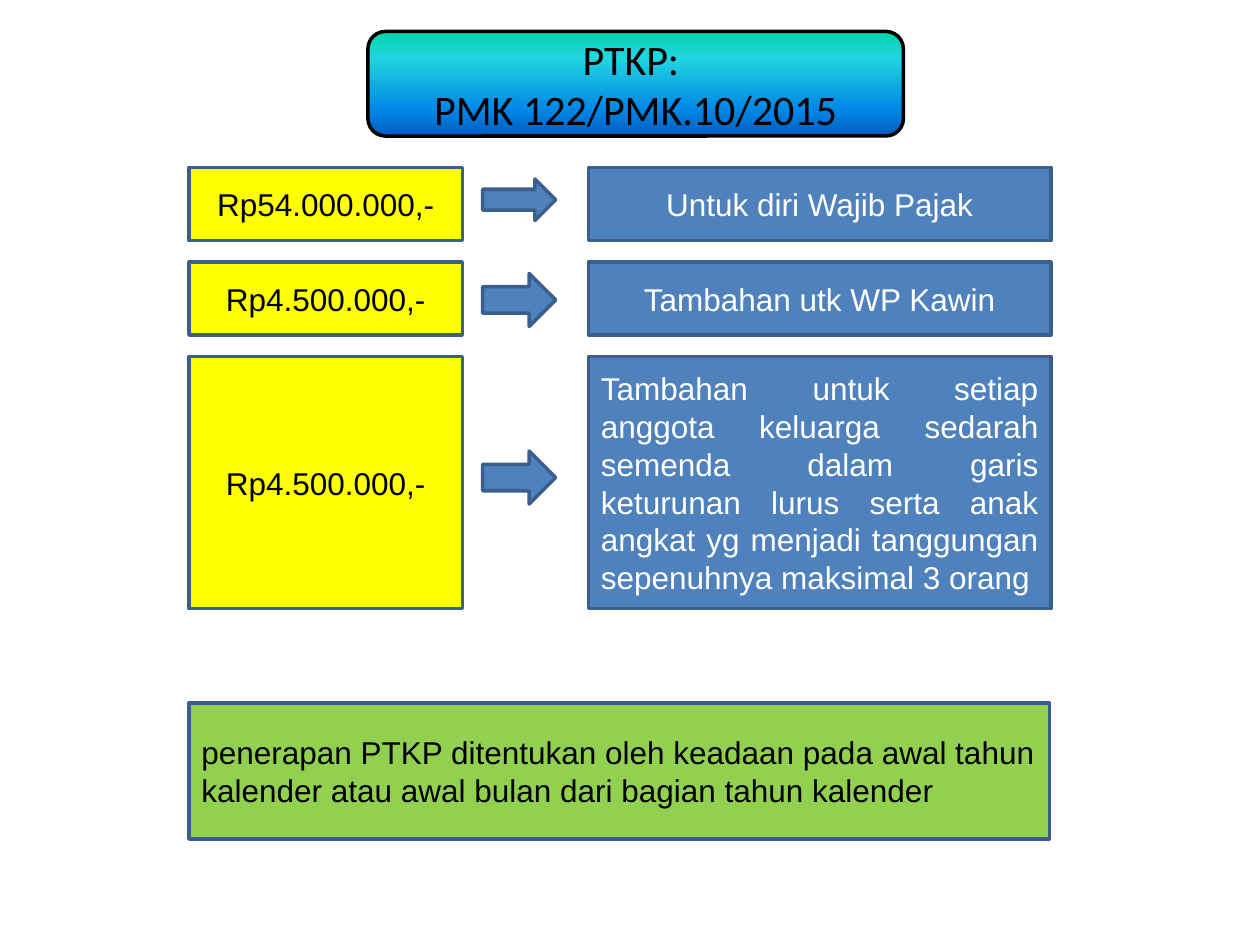
import dataclasses

import lxml.etree
import pptx
import pptx.dml.color
import pptx.enum.shapes
import pptx.enum.text
import pptx.oxml.ns
import pptx.util

Inches = pptx.util.Inches
SHAPE = pptx.enum.shapes.MSO_SHAPE
ALIGN = pptx.enum.text.PP_ALIGN
qn = pptx.oxml.ns.qn


@dataclasses.dataclass(frozen=True)
class Theme:
    """Colours, fonts and type sizes of the slide."""
    black: str = "000000"
    white: str = "FFFFFF"
    yellow: str = "FFFF00"
    blue: str = "4F81BD"
    green: str = "92D050"
    border: str = "3A5F8C"
    banner: tuple = ((0, "03D4A8"), (25, "21D6E0"), (75, "0087E6"), (100, "005CBF"))
    body_font: str = "Arial"
    title_font: str = "Calibri"
    body_size: int = 18
    title_size: int = 24
    line_width: int = 2


def rgb(value):
    """Turn a hex string into a colour."""
    return pptx.dml.color.RGBColor.from_string(value)


class SlideBuilder:
    """Draws styled elements on the current slide."""

    def __init__(self, slide, theme):
        """Keep the slide and its style."""
        self.slide = slide
        self.theme = theme

    def shape(self, kind, at, fill, line):
        """Add a filled and outlined preset shape."""
        sp = self.slide.shapes.add_shape(kind, *(Inches(v) for v in at))
        sp.shadow.inherit = False
        if fill:
            sp.fill.solid()
            sp.fill.fore_color.rgb = rgb(fill)
        sp.line.color.rgb = rgb(line)
        sp.line.width = pptx.util.Pt(self.theme.line_width)
        return sp

    def add_text(self, sp, lines, color, align, font, size):
        """Add one paragraph per line to a shape."""
        tf = sp.text_frame
        tf.word_wrap = True
        tf.vertical_anchor = pptx.enum.text.MSO_ANCHOR.MIDDLE
        for i, text in enumerate(lines):
            p = tf.add_paragraph() if i else tf.paragraphs[0]
            p.alignment = align
            r = p.add_run()
            r.text = text
            r.font.name = font
            r.font.size = pptx.util.Pt(size)
            r.font.color.rgb = rgb(color)

    def box(self, at, text, fill, color, align=ALIGN.CENTER):
        """Add a rectangle with body text."""
        t = self.theme
        sp = self.shape(SHAPE.RECTANGLE, at, fill, t.border)
        self.add_text(sp, [text], color, align, t.body_font, t.body_size)

    def arrow(self, at):
        """Add a block arrow pointing right."""
        self.shape(SHAPE.RIGHT_ARROW, at, self.theme.blue, self.theme.border)

    def banner(self, at, lines):
        """Add the rounded title with a vertical gradient."""
        t = self.theme
        sp = self.shape(SHAPE.ROUNDED_RECTANGLE, at, None, t.black)
        sp.fill.gradient()
        sp.fill.gradient_angle = 270
        stops = sp._element.spPr.find(".//" + qn("a:gsLst"))
        for stop in list(stops):
            stops.remove(stop)
        for percent, color in t.banner:
            stop = lxml.etree.SubElement(stops, qn("a:gs"), pos=str(percent * 1000))
            lxml.etree.SubElement(stop, qn("a:srgbClr"), val=color)
        self.add_text(sp, lines, t.black, ALIGN.CENTER, t.title_font, t.title_size)


def main():
    """Build and save the slide."""
    prs = pptx.Presentation()
    prs.slide_width, prs.slide_height = Inches(10), Inches(7.5)
    theme = Theme()
    s = SlideBuilder(prs.slides.add_slide(prs.slide_layouts[6]), theme)

    rows = [
        (1.33, 0.58, "Rp54.000.000,-", "Untuk diri Wajib Pajak",
         ALIGN.CENTER, 1.42, 0.33),
        (2.08, 0.58, "Rp4.500.000,-", "Tambahan utk WP Kawin",
         ALIGN.CENTER, 2.17, 0.42),
        (2.83, 2, "Rp4.500.000,-",
         "Tambahan untuk setiap anggota keluarga sedarah semenda dalam garis "
         "keturunan lurus serta anak angkat yg menjadi tanggungan sepenuhnya "
         "maksimal 3 orang",
         ALIGN.JUSTIFY, 3.58, 0.42),
    ]
    for top, height, amount, reason, align, arrow_top, arrow_height in rows:
        s.box((1.5, top, 2.17, height), amount, theme.yellow, theme.black)
        s.box((4.67, top, 3.67, height), reason, theme.blue, theme.white, align)
        s.arrow((3.83, arrow_top, 0.58, arrow_height))

    s.box((1.5, 5.58, 6.83, 1.08),
          "penerapan PTKP ditentukan oleh keadaan pada awal tahun "
          "kalender atau awal bulan dari bagian tahun kalender",
          theme.green, theme.black, ALIGN.LEFT)
    s.banner((2.92, 0.25, 4.25, 0.83), ["PTKP: ", "PMK 122/PMK.10/2015"])
    prs.save("out.pptx")


if __name__ == "__main__":
    main()
